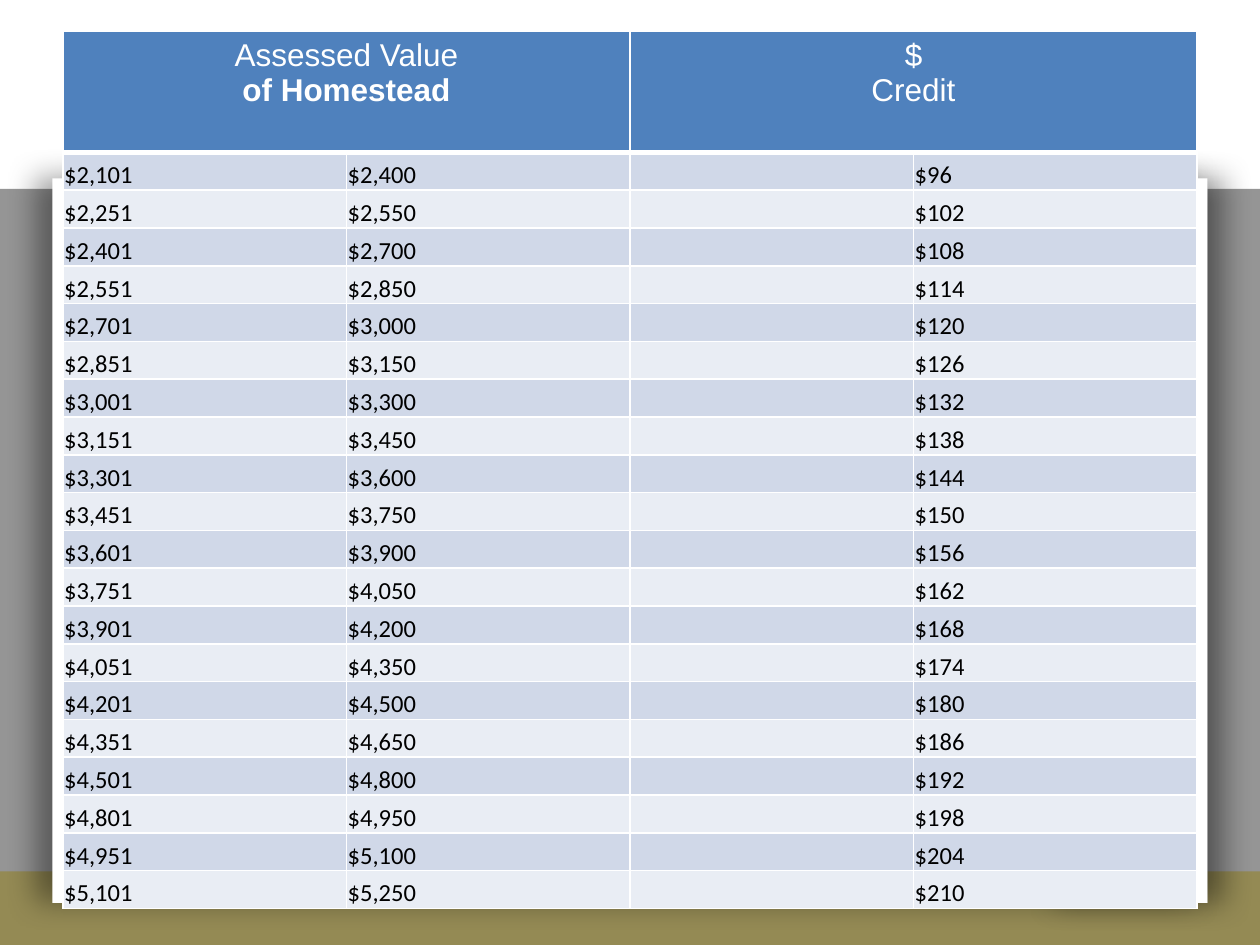
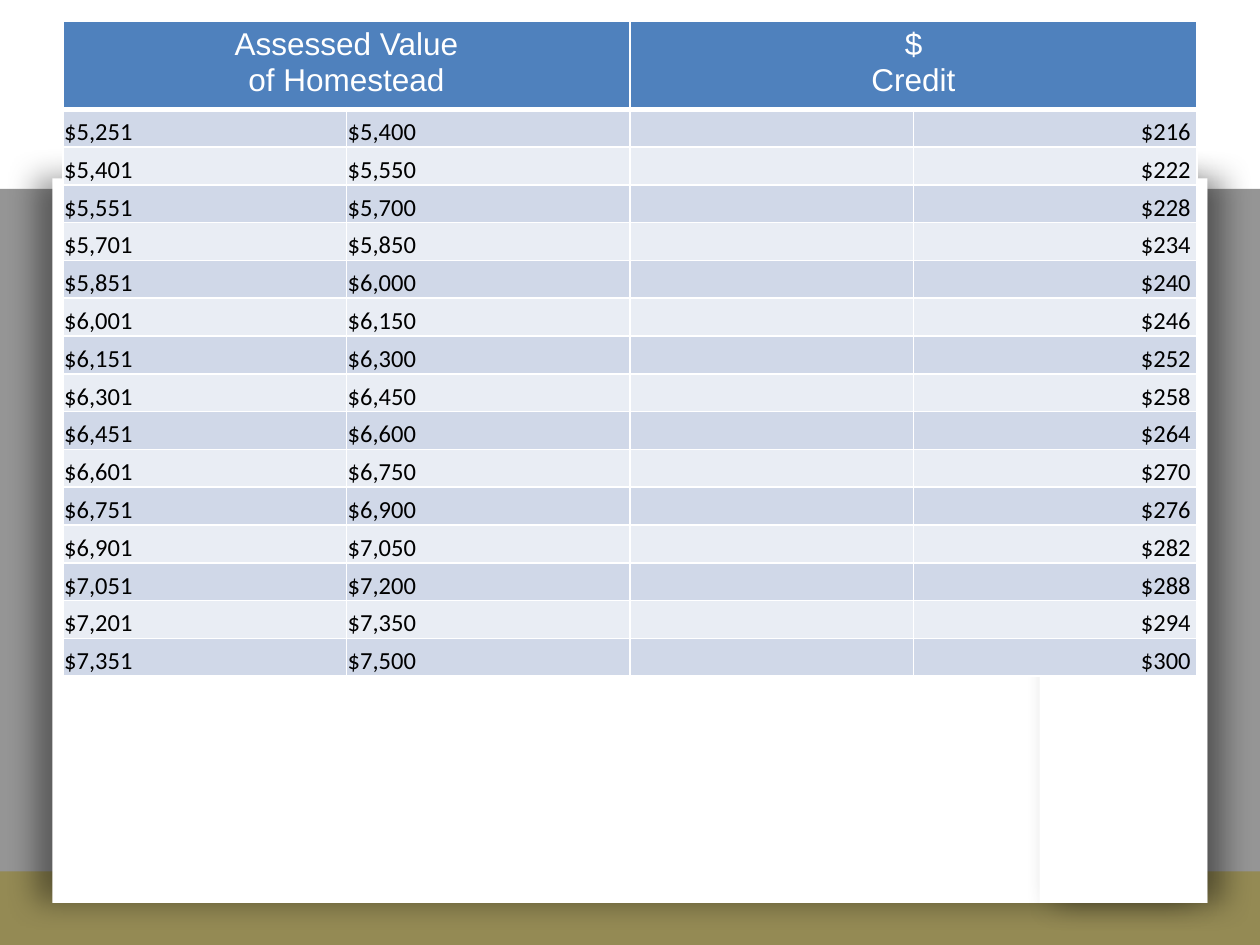
from lxml import etree
from pptx import Presentation, util as u
from pptx.dml.color import RGBColor
from pptx.enum import shapes, text
from pptx.oxml import ns

COLORS = {
    "white": "FFFFFF", "black": "000000", "side": "959595", "floor": "948A54",
    "header": "4F81BD", "band": "D0D8E8", "light_band": "E9EDF4",
}
WIDTH, HEIGHT = 10, 7.5
GRID = 1 / 12  # inches per grid unit
COLUMN_COUNT = 4
ROW_HEIGHT = 0.3
BRACKET = 150
CREDIT_RATE = 0.04


def color(name):
    return RGBColor.from_string(COLORS[name])


def add_shadow(shape, direction):
    """Cast a soft black shadow towards the given angle in degrees."""
    effects = etree.SubElement(shape._element.spPr, ns.qn("a:effectLst"))
    shadow = etree.SubElement(
        effects, ns.qn("a:outerShdw"), blurRad=str(u.Pt(17)), dist=str(u.Pt(9)),
        dir=str(direction * 60000), algn="ctr", rotWithShape="0")
    black = etree.SubElement(shadow, ns.qn("a:srgbClr"), val=COLORS["black"])
    etree.SubElement(black, ns.qn("a:alpha"), val="40000")


def add_panel(slide, box, fill, shadow_direction=None):
    """Add a plain rectangle; box is left, top, width, height in grid units."""
    shape = slide.shapes.add_shape(
        shapes.MSO_SHAPE.RECTANGLE, *(u.Inches(units * GRID) for units in box))
    shape.fill.solid()
    shape.fill.fore_color.rgb = color(fill)
    shape.line.fill.background()
    if shadow_direction is None:
        shape.shadow.inherit = False
    else:
        add_shadow(shape, shadow_direction)


def add_backdrop(slide):
    """Side bands, floor band and the raised white page."""
    columns, rows = WIDTH / GRID, HEIGHT / GRID
    band = 7
    for left in (0, columns - band):
        add_panel(slide, (left, 18, band, rows - 18), "side")
    add_panel(slide, (0, rows - band, columns, band), "floor")
    add_panel(slide, (5, 17, columns - 10, 69), "white", 180)
    add_panel(slide, (columns - 21, 17, 16, 69), "white", 0)


def style_cell(cell, fill, bottom_width=1):
    properties = cell._tc.get_or_add_tcPr()
    for side in "LRTB":
        width = bottom_width if side == "B" else 1
        line = etree.SubElement(properties, ns.qn(f"a:ln{side}"), w=str(u.Pt(width)))
        solid = etree.SubElement(line, ns.qn("a:solidFill"))
        etree.SubElement(solid, ns.qn("a:srgbClr"), val=COLORS["white"])
    cell.fill.solid()
    cell.fill.fore_color.rgb = color(fill)


def format_runs(paragraph, font, size, font_color, bold=False):
    for run in paragraph.runs:
        run.font.name = font
        run.font.size = u.Pt(size)
        run.font.bold = bold
        run.font.color.rgb = color(font_color)


def fill_header(table, bold_homestead):
    for cell in table.rows[0].cells:
        style_cell(cell, "header", 3)
    for column, label in ((0, "Assessed Value\nof Homestead"), (2, "$\nCredit")):
        cell = table.cell(0, column)
        cell.merge(table.cell(0, column + 1))
        cell.text_frame.text = label
        for paragraph in cell.text_frame.paragraphs:
            paragraph.alignment = text.PP_ALIGN.CENTER
            bold = bold_homestead and paragraph.text == "of Homestead"
            format_runs(paragraph, "Arial", 18, "white", bold)


def fill_value(cell, value, fill):
    style_cell(cell, fill)
    cell.vertical_anchor = text.MSO_ANCHOR.BOTTOM
    cell.margin_left = cell.margin_right = cell.margin_top = u.Inches(0.01)
    cell.margin_bottom = 0
    cell.text_frame.text = value
    paragraph = cell.text_frame.paragraphs[0]
    format_runs(paragraph, "Calibri", 14, "black")
    if not value:
        paragraph._p.get_or_add_endParaRPr().set("sz", "1400")


def bracket_row(highest):
    """Texts for the bracket ending at the given value; low ones span two steps."""
    span = 2 * BRACKET if highest <= 4800 else BRACKET
    return (f"${highest - span + 1:,}", f"${highest:,}", "",
            f"${highest * CREDIT_RATE:.0f}")


def add_credit_table(slide, top, header_height, first, last,
                     bold_homestead=False, credits_right=False):
    """Table of the brackets whose upper ends run from first to last."""
    brackets = range(first, last + 1, BRACKET)
    left, width = 0.05 * WIDTH, 0.9 * WIDTH
    height = header_height + len(brackets) * ROW_HEIGHT
    table = slide.shapes.add_table(
        len(brackets) + 1, COLUMN_COUNT,
        *(u.Inches(length) for length in (left, top, width, height))).table
    table.first_row = table.horz_banding = False
    for column in table.columns:
        column.width = u.Inches(width / COLUMN_COUNT)
    for row in table.rows:
        row.height = u.Inches(ROW_HEIGHT)
    table.rows[0].height = u.Inches(header_height)
    fill_header(table, bold_homestead)
    for row, highest in enumerate(brackets, start=1):
        fill = "band" if row % 2 else "light_band"
        for column, value in enumerate(bracket_row(highest)):
            fill_value(table.cell(row, column), value, fill)
        if credits_right:
            cell = table.cell(row, COLUMN_COUNT - 1)
            cell.margin_right = u.Inches(0.05)
            cell.text_frame.paragraphs[0].alignment = text.PP_ALIGN.RIGHT


def add_credit_slide(presentation, **table_options):
    slide = presentation.slides.add_slide(presentation.slide_layouts[6])
    add_backdrop(slide)
    add_credit_table(slide, **table_options)


def main():
    presentation = Presentation()
    presentation.slide_width = u.Inches(WIDTH)
    presentation.slide_height = u.Inches(HEIGHT)
    add_credit_slide(presentation, top=3 * GRID, header_height=0.96,
                     first=2400, last=5250, bold_homestead=True)
    add_credit_slide(presentation, top=2 * GRID, header_height=0.7,
                     first=5400, last=7500, credits_right=True)
    presentation.save("out.pptx")


if __name__ == "__main__":
    main()
